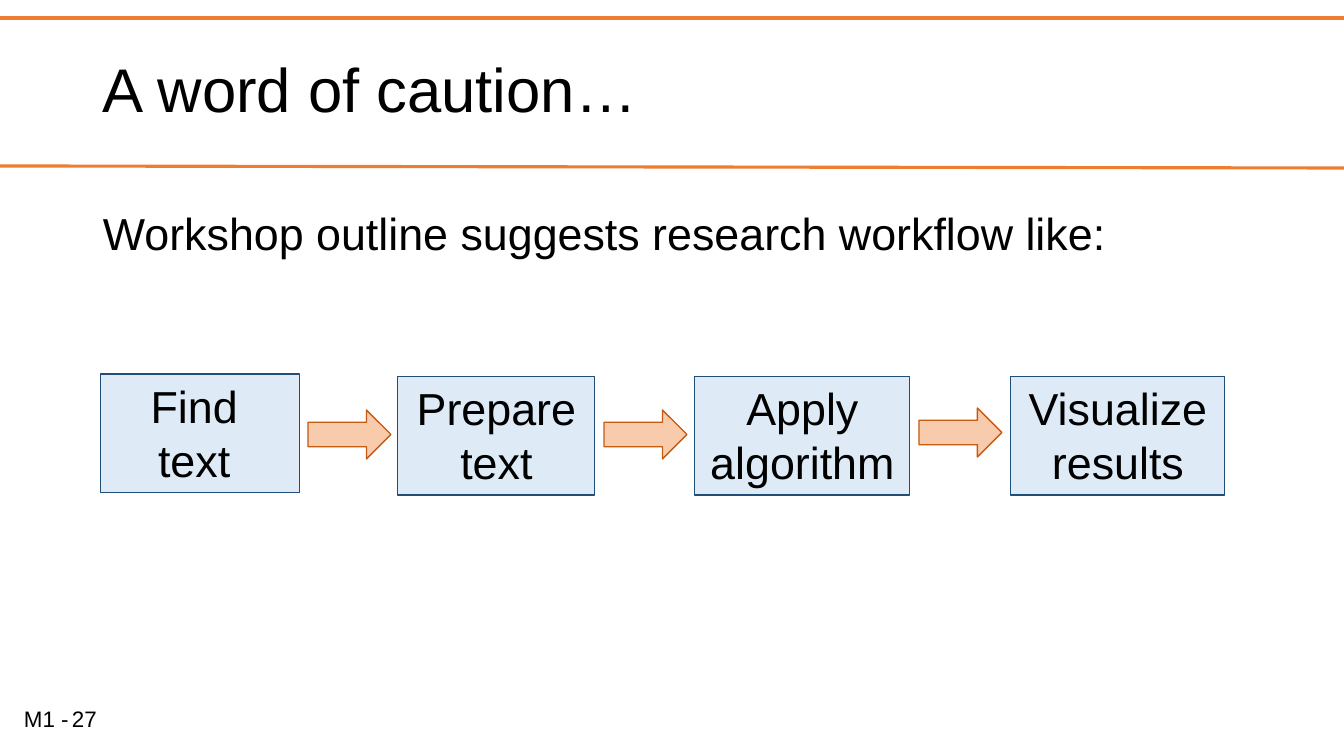
from lxml import etree
from pptx import Presentation, util as u
from pptx.dml.color import RGBColor
from pptx.enum import shapes, text
from pptx.oxml.ns import qn

COLORS = {
    "rule": "ED7D31",
    "text": "000000",
    "step": "DEEBF7",
    "step_line": "1F4E79",
    "arrow": "F8CBAD",
    "arrow_line": "C55A11",
}
STEPS = [
    (101, 374, 199, ["Find ", "text "]),
    (398, 376, 197, ["Prepare text"]),
    (695, 376, 215, ["Apply algorithm"]),
    (1011, 376, 214, ["Visualize results"]),
]
ARROWS = [(308, 410), (604, 410), (919, 408)]


def px(n):
    return u.Emu(round(n * 914400 / 100.8))


def color(name):
    return RGBColor.from_string(COLORS[name])


def write(tf, *lines, size=32, align=text.PP_ALIGN.LEFT, anchor=text.MSO_ANCHOR.TOP,
          spacing=1.0, wrap=True):
    tf.word_wrap = wrap
    tf.vertical_anchor = anchor
    for i, line in enumerate(lines):
        p = tf.paragraphs[0] if i == 0 else tf.add_paragraph()
        p.alignment = align
        p.line_spacing = spacing
        r = p.add_run()
        r.text = line
        r.font.name = "Arial"
        r.font.size = u.Pt(size)
        r.font.color.rgb = color("text")


class Deck:
    def __init__(self):
        self.prs = Presentation()
        self.prs.slide_width, self.prs.slide_height = px(1344), px(756)
        self.s = self.prs.slides.add_slide(self.prs.slide_layouts[6])

    def rule(self, x1, y1, x2, y2):
        line = self.s.shapes.add_connector(
            shapes.MSO_CONNECTOR.STRAIGHT, px(x1), px(y1), px(x2), px(y2))
        line.line.color.rgb = color("rule")
        line.line.width = u.Pt(2.25)
        etree.SubElement(line._element.spPr, qn("a:effectLst"))

    def label(self, x, y, w, h, line, **fmt):
        sp = self.s.shapes.add_textbox(px(x), px(y), px(w), px(h))
        write(sp.text_frame, line, **fmt)

    def shape(self, kind, x, y, w, h, fill, width):
        sp = self.s.shapes.add_shape(kind, px(x), px(y), px(w), px(h))
        sp.shadow.inherit = False
        sp.fill.solid()
        sp.fill.fore_color.rgb = color(fill)
        sp.line.color.rgb = color(fill + "_line")
        sp.line.width = u.Pt(width)
        return sp

    def step(self, x, y, w, lines):
        sp = self.shape(shapes.MSO_SHAPE.RECTANGLE, x, y, w, 119, "step", 0.75)
        write(sp.text_frame, *lines, align=text.PP_ALIGN.CENTER)

    def arrow(self, x, y):
        self.shape(shapes.MSO_SHAPE.RIGHT_ARROW, x, y, 83, 49, "arrow", 1)


def main():
    deck = Deck()
    deck.rule(0, 18, 1344, 18)
    deck.rule(0, 166, 1344, 168)
    deck.label(14, 700, 79, 37, "M1 -", size=16, wrap=False)
    deck.label(93, 20, 1159, 146, "A word of caution…", size=44,
               anchor=text.MSO_ANCHOR.MIDDLE, spacing=0.9)
    deck.label(93, 201, 1085, 65, "Workshop outline suggests research workflow like:")
    for step in STEPS:
        deck.step(*step)
    for arrow in ARROWS:
        deck.arrow(*arrow)
    deck.label(62, 698, 226, 41, "27", size=16, anchor=text.MSO_ANCHOR.MIDDLE)
    deck.prs.save("out.pptx")


if __name__ == "__main__":
    main()
